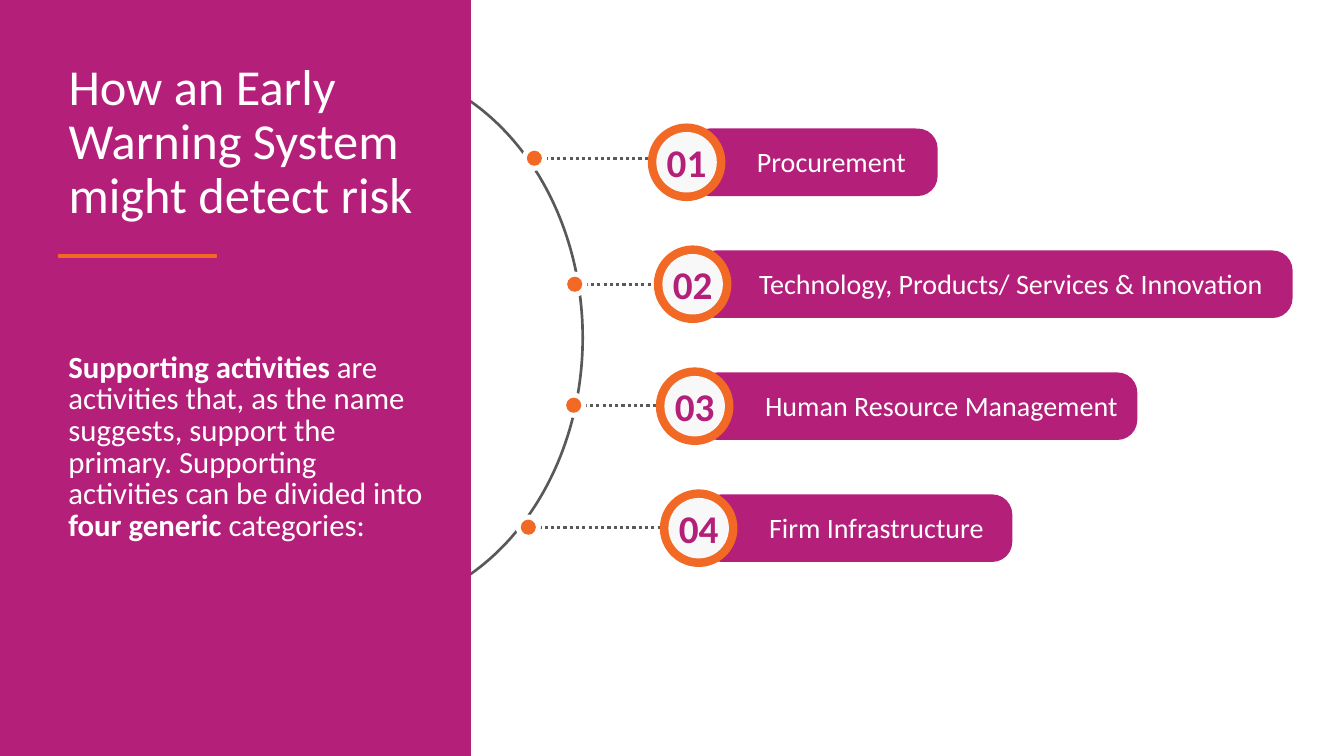
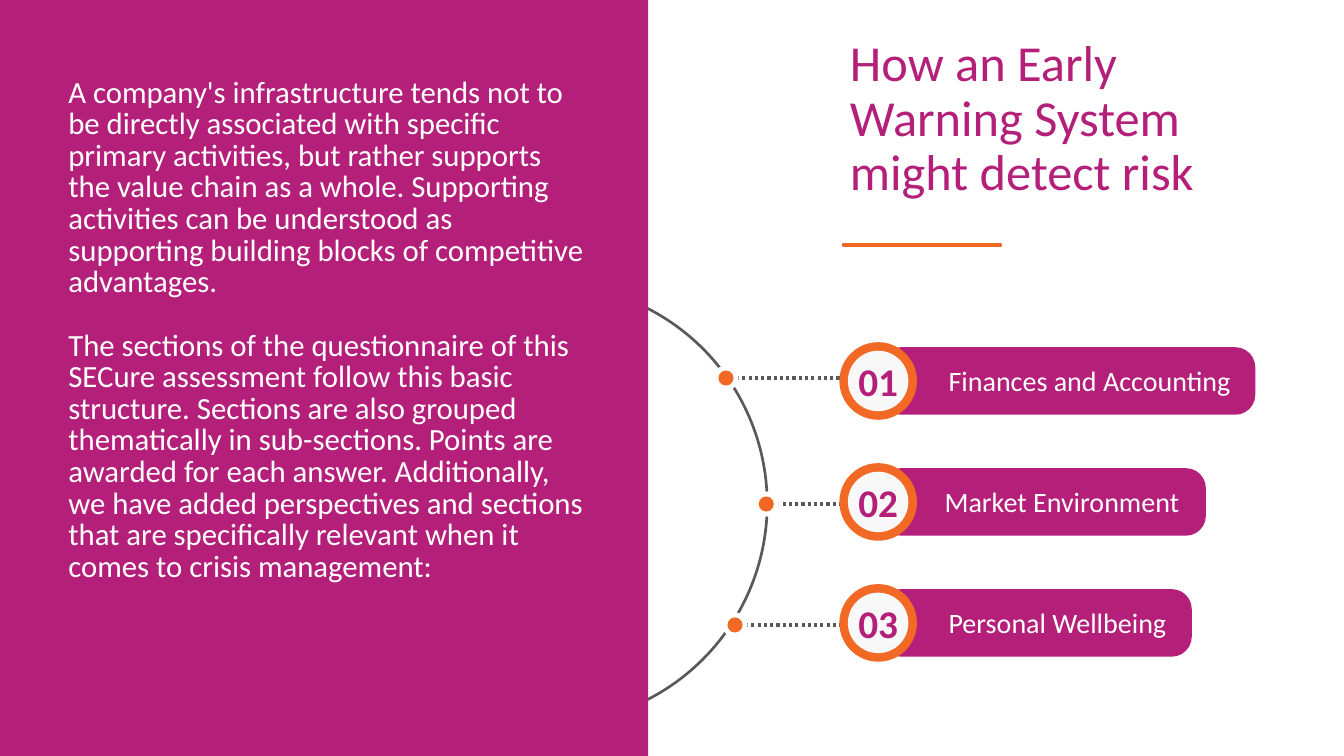
from lxml import etree
from pptx import Presentation
from pptx.dml.color import RGBColor
from pptx.enum.dml import MSO_LINE
from pptx.enum.shapes import MSO_CONNECTOR, MSO_SHAPE
from pptx.enum.text import MSO_ANCHOR, MSO_AUTO_SIZE, PP_ALIGN
from pptx.oxml.ns import qn
from pptx.util import Inches, Pt

RECT, OVAL, ARC, ROUNDED = (MSO_SHAPE.RECTANGLE, MSO_SHAPE.OVAL, MSO_SHAPE.ARC,
                            MSO_SHAPE.ROUNDED_RECTANGLE)
STRAIGHT, DOTTED = MSO_CONNECTOR.STRAIGHT, MSO_LINE.ROUND_DOT
TOP, MIDDLE = MSO_ANCHOR.TOP, MSO_ANCHOR.MIDDLE
LEFT, CENTER = PP_ALIGN.LEFT, PP_ALIGN.CENTER
FIXED_SIZE = MSO_AUTO_SIZE.NONE

MAGENTA, ORANGE, WHITE = "B41F7A", "F16924", "FFFFFF"
DISC_GREY, LINE_GREY = "F8F8F8", "595959"
FONT = "Calibri"
SLIDE_W, SLIDE_H = 13.33, 7.5
MARGIN_X = 0.58
HEADING = "How an Early Warning System might detect risk"


def rgb(value):
    return RGBColor.from_string(value)


def box(left, top, width, height):
    return [Inches(v) for v in (left, top, width, height)]


def add_block(slide, kind, area, fill=None, line=None, weight=1):
    block = slide.shapes.add_shape(kind, *box(*area))
    block.shadow.inherit = False
    if fill:
        block.fill.solid()
        block.fill.fore_color.rgb = rgb(fill)
    else:
        block.fill.background()
    if line:
        block.line.color.rgb = rgb(line)
        block.line.width = Pt(weight)
    else:
        block.line.fill.background()
    return block


def add_disc(slide, x, y, size, fill):
    return add_block(slide, OVAL, (x - size / 2, y - size / 2, size, size), fill)


def set_frame(frame, **values):
    for key, value in {"word_wrap": True, "auto_size": FIXED_SIZE, **values}.items():
        setattr(frame, key, value)


def write(paragraph, runs, color, size, **layout):
    for key, value in {"alignment": LEFT, **layout}.items():
        setattr(paragraph, key, value)
    for text, bold in runs:
        run = paragraph.add_run()
        run.text = text
        for key, value in {"name": FONT, "size": Pt(size), "bold": bold}.items():
            setattr(run.font, key, value)
        run.font.color.rgb = rgb(color)


def add_heading(slide, left, top, color, rule_left, rule_top):
    title = slide.shapes.title
    title.left, title.top, title.width, title.height = box(left, top, 3.79, 1.9)
    set_frame(title.text_frame, vertical_anchor=TOP)
    write(title.text_frame.paragraphs[0], [(HEADING, False)], color, 36,
          line_spacing=0.9)
    title.element.getparent().append(title.element)
    add_block(slide, RECT, (rule_left, rule_top, 1.57, 0.02), ORANGE, ORANGE)


def add_panel(slide, width, text_top, text_width, paragraphs, gap):
    add_block(slide, RECT, (0, 0, width, SLIDE_H), MAGENTA)
    body = slide.shapes.add_textbox(
        *box(MARGIN_X, text_top, text_width, SLIDE_H - text_top - 0.1))
    frame = body.text_frame
    set_frame(frame)
    for index, runs in enumerate(paragraphs):
        paragraph = frame.add_paragraph() if index else frame.paragraphs[0]
        write(paragraph, runs, WHITE, 22, line_spacing=Pt(22.6),
              space_before=Pt(gap if index else 0))


def add_arc(slide, center_x, top, radius_x, height):
    arc = add_block(slide, ARC, (center_x - radius_x, top, 2 * radius_x, height),
                    line=LINE_GREY, weight=1.91)
    arc.adjustments[0], arc.adjustments[1] = 162, 54


def add_leader(slide, dot_x, dot_y, end_x):
    leader = slide.shapes.add_connector(
        STRAIGHT, *box(dot_x + 0.1, dot_y, end_x, dot_y))
    leader.line.color.rgb = rgb(LINE_GREY)
    leader.line.width = Pt(2.25)
    leader.line.dash_style = DOTTED
    etree.SubElement(leader.element.spPr, qn("a:effectLst"))
    add_disc(slide, dot_x, dot_y, 0.25, WHITE)
    add_disc(slide, dot_x, dot_y, 0.15, ORANGE)


def add_item(slide, number, label, x, y, bar_width, inset):
    bar = add_block(slide, ROUNDED, (x + 0.03, y - 0.335, bar_width, 0.67), MAGENTA)
    bar.adjustments[0] = 0.296
    set_frame(bar.text_frame, vertical_anchor=MIDDLE, margin_left=Inches(inset),
              margin_right=0, margin_top=Inches(0.04), margin_bottom=0)
    write(bar.text_frame.paragraphs[0], [(label, False)], WHITE, 20,
          line_spacing=Pt(20.4))
    add_disc(slide, x, y, 0.77, ORANGE)
    badge = add_disc(slide, x, y, 0.6, DISC_GREY)
    set_frame(badge.text_frame, word_wrap=False, vertical_anchor=MIDDLE,
              margin_left=0, margin_right=0, margin_top=0, margin_bottom=0)
    write(badge.text_frame.paragraphs[0], [(f"{number:02}", True)], MAGENTA, 28,
          alignment=CENTER)


def add_items(slide, first_y, step, items):
    for index, (label, dot_x, dot_y, badge_x, bar_width, inset) in enumerate(items):
        add_leader(slide, dot_x, dot_y, badge_x)
        add_item(slide, index + 1, label, badge_x, first_y + index * step,
                 bar_width, inset)


def build_slide(deck, arc, panel, heading, items):
    slide = deck.slides.add_slide(deck.slide_layouts[5])
    add_arc(slide, **arc)
    add_panel(slide, **panel)
    add_heading(slide, **heading)
    add_items(slide, **items)


SUPPORTING = {
    "arc": {"center_x": 3.55, "top": 0.64, "radius_x": 2.23, "height": 5.42},
    "panel": {
        "width": 4.67, "text_top": 3.45, "text_width": 3.79, "gap": 0,
        "paragraphs": [
            [("Supporting activities ", True),
             ("are activities that, as the name suggests, support the primary. "
              "Supporting", False)],
            [("activities can be divided into ", False), ("four generic ", True),
             ("categories:", False)],
        ],
    },
    "heading": {"left": MARGIN_X, "top": 0.56, "color": WHITE,
                "rule_left": MARGIN_X, "rule_top": 2.53},
    "items": {
        "first_y": 1.61, "step": 1.21,
        "items": [
            ("Procurement", 5.3, 1.57, 6.81, 2.46, 0.61),
            ("Technology, Products/ Services & Innovation",
             5.7, 2.82, 6.87, 5.92, 0.57),
            ("Human Resource Management", 5.69, 4.02, 6.89, 4.36, 0.61),
            ("Firm Infrastructure", 5.24, 5.23, 6.93, 3.08, 0.61),
        ],
    },
}

QUESTIONNAIRE = {
    "arc": {"center_x": 5.43, "top": 2.82, "radius_x": 2.18, "height": 4.36},
    "panel": {
        "width": 6.43, "text_top": 0.72, "text_width": 5.37, "gap": 22.6,
        "paragraphs": [
            [("A company's infrastructure tends not to be directly associated with "
              "specific primary activities, but rather supports the value chain as a "
              "whole. Supporting activities can be understood as supporting building "
              "blocks of competitive advantages.", False)],
            [("The sections of the questionnaire of this SECure assessment follow "
              "this basic structure. Sections are also grouped thematically in "
              "sub-sections. Points are awarded for each answer. Additionally, we "
              "have added perspectives and sections that are specifically relevant "
              "when it comes to crisis management:", False)],
        ],
    },
    "heading": {"left": 8.33, "top": 0.33, "color": MAGENTA,
                "rule_left": 8.36, "rule_top": 2.42},
    "items": {
        "first_y": 3.78, "step": 1.2,
        "items": [
            ("Finances and Accounting", 7.2, 3.75, 8.71, 3.71, 0.61),
            ("Market Environment", 7.6, 5, 8.71, 3.22, 0.57),
            ("Personal Wellbeing", 7.29, 6.2, 8.71, 3.08, 0.61),
        ],
    },
}


def main():
    deck = Presentation()
    deck.slide_width, deck.slide_height = Inches(SLIDE_W), Inches(SLIDE_H)
    for content in (SUPPORTING, QUESTIONNAIRE):
        build_slide(deck, **content)
    deck.save("out.pptx")


if __name__ == "__main__":
    main()
